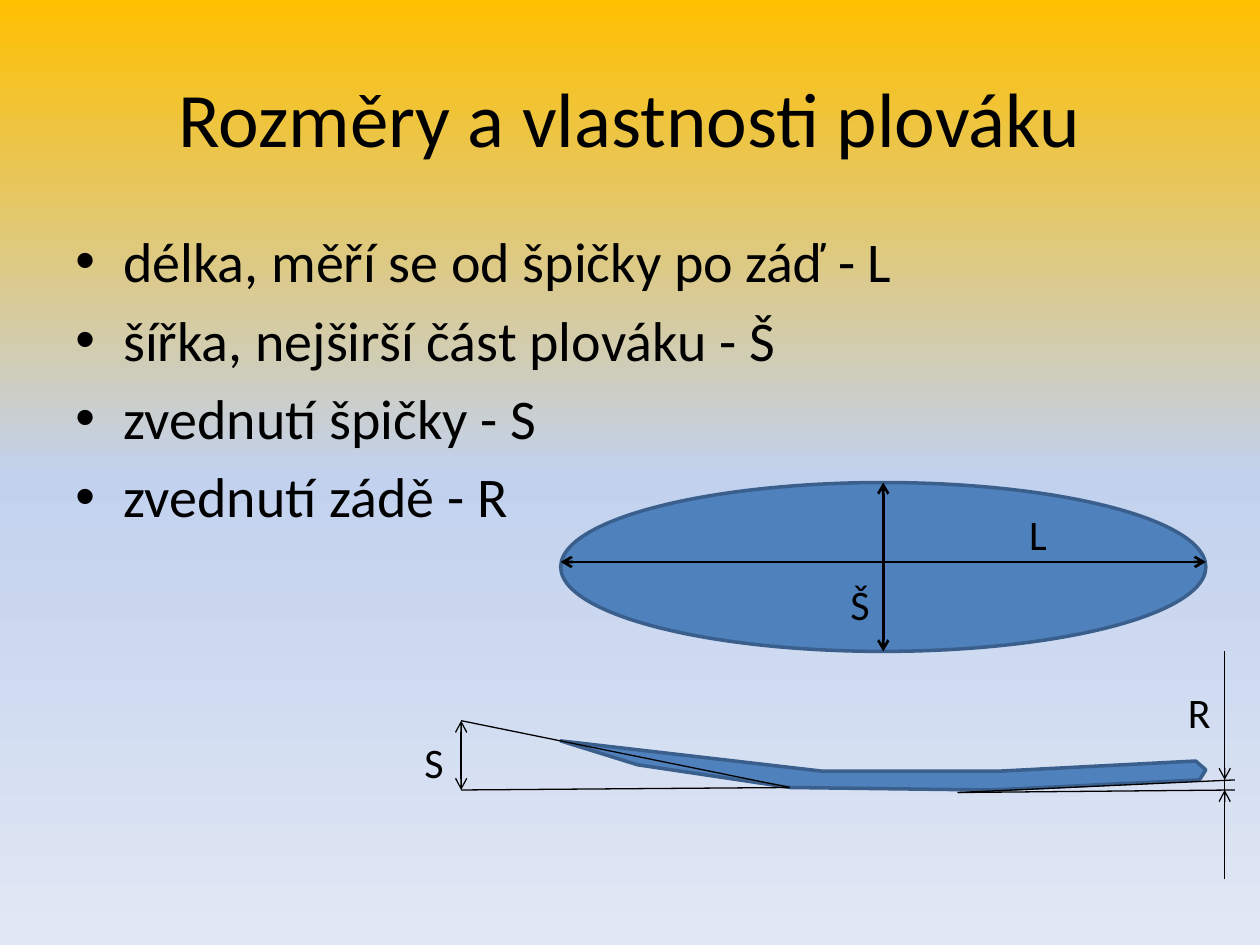
from copy import deepcopy

from lxml.etree import SubElement
from pptx import Presentation
from pptx.dml.color import RGBColor
from pptx.enum.shapes import MSO_CONNECTOR, MSO_SHAPE
from pptx.enum.text import MSO_ANCHOR, MSO_AUTO_SIZE, PP_ALIGN
from pptx.oxml.ns import qn
from pptx.util import Inches, Pt

BLACK = "000000"
FLOAT_FILL = "4F81BD"
FLOAT_EDGE = "3A5F8C"
BACKGROUND = [(0, "FFC000"), (0.5, "C2D1ED"), (1, "E1E8F5")]


def color(value):
    return RGBColor.from_string(value)


class FloatSlide:
    font_name = "Calibri"
    bullet_indent = Inches(0.38)

    def __init__(self, page):
        self.page = page

    def background(self, stops):
        """Fill the page with a gradient that runs from top to bottom."""
        fill = self.page.background.fill
        fill.gradient()
        fill.gradient_angle = 270
        stop_list = self.page.background._cSld.find(".//" + qn("a:gsLst"))
        while len(stop_list) < len(stops):
            stop_list.append(deepcopy(stop_list[-1]))
        for stop, (position, value) in zip(fill.gradient_stops, stops):
            stop.position = position
            stop.color.rgb = color(value)

    def font(self, para, size):
        para.font.name = self.font_name
        para.font.size = Pt(size)
        para.font.color.rgb = color(BLACK)

    def title(self, text, left, top, width, height):
        box = self.page.shapes.title
        box.left, box.top = Inches(left), Inches(top)
        box.width, box.height = Inches(width), Inches(height)
        frame = box.text_frame
        frame.text = text
        frame.vertical_anchor = MSO_ANCHOR.MIDDLE
        para = frame.paragraphs[0]
        para.alignment = PP_ALIGN.CENTER
        self.font(para, 44)

    def text_box(self, text, left, top, width, height, size):
        box = self.page.shapes.add_textbox(
            Inches(left), Inches(top), Inches(width), Inches(height))
        frame = box.text_frame
        frame.text = text
        for para in frame.paragraphs:
            self.font(para, size)
        return frame

    def bullets(self, items, left, top, width, height):
        frame = self.text_box("\n".join(items), left, top, width, height, 32)
        frame.word_wrap = True
        for para in frame.paragraphs:
            para.space_before = Pt(6.4)
            props = para._p.get_or_add_pPr()
            props.set("marL", str(self.bullet_indent))
            props.set("indent", str(-self.bullet_indent))
            SubElement(props, qn("a:buFont"), typeface="Arial")
            SubElement(props, qn("a:buChar"), char="•")

    def label(self, text, left, top, width):
        frame = self.text_box(text, left, top, width, 0.5, 24)
        frame.word_wrap = False
        frame.auto_size = MSO_AUTO_SIZE.SHAPE_TO_FIT_TEXT

    def paint(self, shape):
        shape.shadow.inherit = False
        shape.fill.solid()
        shape.fill.fore_color.rgb = color(FLOAT_FILL)
        shape.line.color.rgb = color(FLOAT_EDGE)
        shape.line.width = Pt(2)

    def ellipse(self, left, top, width, height):
        self.paint(self.page.shapes.add_shape(
            MSO_SHAPE.OVAL, Inches(left), Inches(top), Inches(width), Inches(height)))

    def outline(self, points):
        corners = [(Inches(x), Inches(y)) for x, y in points]
        builder = self.page.shapes.build_freeform(*corners[0], scale=1.0)
        builder.add_line_segments(corners[1:], close=True)
        self.paint(builder.convert_to_shape())

    def line(self, start, end, width=0.75, arrows=()):
        """Draw a line; arrows names its pointed ends, headEnd before tailEnd."""
        connector = self.page.shapes.add_connector(
            MSO_CONNECTOR.STRAIGHT, *(Inches(value) for value in start + end))
        connector.line.color.rgb = color(BLACK)
        connector.line.width = Pt(width)
        for arrow in arrows:
            SubElement(connector.line._get_or_add_ln(), qn("a:" + arrow), type="arrow")
        SubElement(connector._element.spPr, qn("a:effectLst"))


def main():
    deck = Presentation()
    deck.slide_width, deck.slide_height = Inches(10), Inches(7.5)
    slide = FloatSlide(deck.slides.add_slide(deck.slide_layouts[5]))
    slide.background(BACKGROUND)
    slide.title("Rozměry a vlastnosti plováku", 0.5, 0.3, 9, 1.25)
    slide.bullets([
        "délka, měří se od špičky po záď - L",
        "šířka, nejširší část plováku - Š",
        "zvednutí špičky - S",
        "zvednutí zádě - R",
    ], 0.5, 1.75, 9, 4.95)

    # Float from above and from the side
    left, top, length, breadth = 4.45, 3.83, 5.12, 1.34
    right, bottom, middle = left + length, top + breadth, left + length / 2
    bow_bend = (6.27, 6.25)
    slide.ellipse(left, top, length, breadth)
    slide.outline([
        (left, 5.88), (6.52, 6.12), (7.94, 6.12), (9.49, 6.04), (right, 6.11),
        (9.52, 6.19), (7.87, 6.27), bow_bend, (5.06, 6.07),
    ])

    # Length and width
    both = ("headEnd", "tailEnd")
    slide.line((left, 4.46), (right, 4.46), 1.5, both)
    slide.line((middle, top), (middle, bottom), 1.5, both)

    # Bow lift
    bow_low, bow_high = (3.66, 6.27), (3.66, 5.72)
    slide.line(bow_bend, bow_low)
    slide.line(bow_bend, bow_high)
    slide.line(bow_low, bow_high, arrows=both)

    # Stern lift
    stern_bend, stern_x, stern_low, stern_high = (7.6, 6.29), 9.72, 6.27, 6.19
    for height in (stern_low, stern_high):
        slide.line((9.8, height), stern_bend)
    slide.line((stern_x, 6.66), (stern_x, bottom))
    for start, end in ((5.32, stern_high), (6.98, stern_low)):
        slide.line((stern_x, start), (stern_x, end), arrows=("tailEnd",))

    for text, x, y, width in (
        ("L", 8.07, 3.99, 0.34),
        ("Š", 6.65, 4.54, 0.36),
        ("S", 3.27, 5.8, 0.36),
        ("R", 9.33, 5.4, 0.38),
    ):
        slide.label(text, x, y, width)

    deck.save("out.pptx")


if __name__ == "__main__":
    main()
